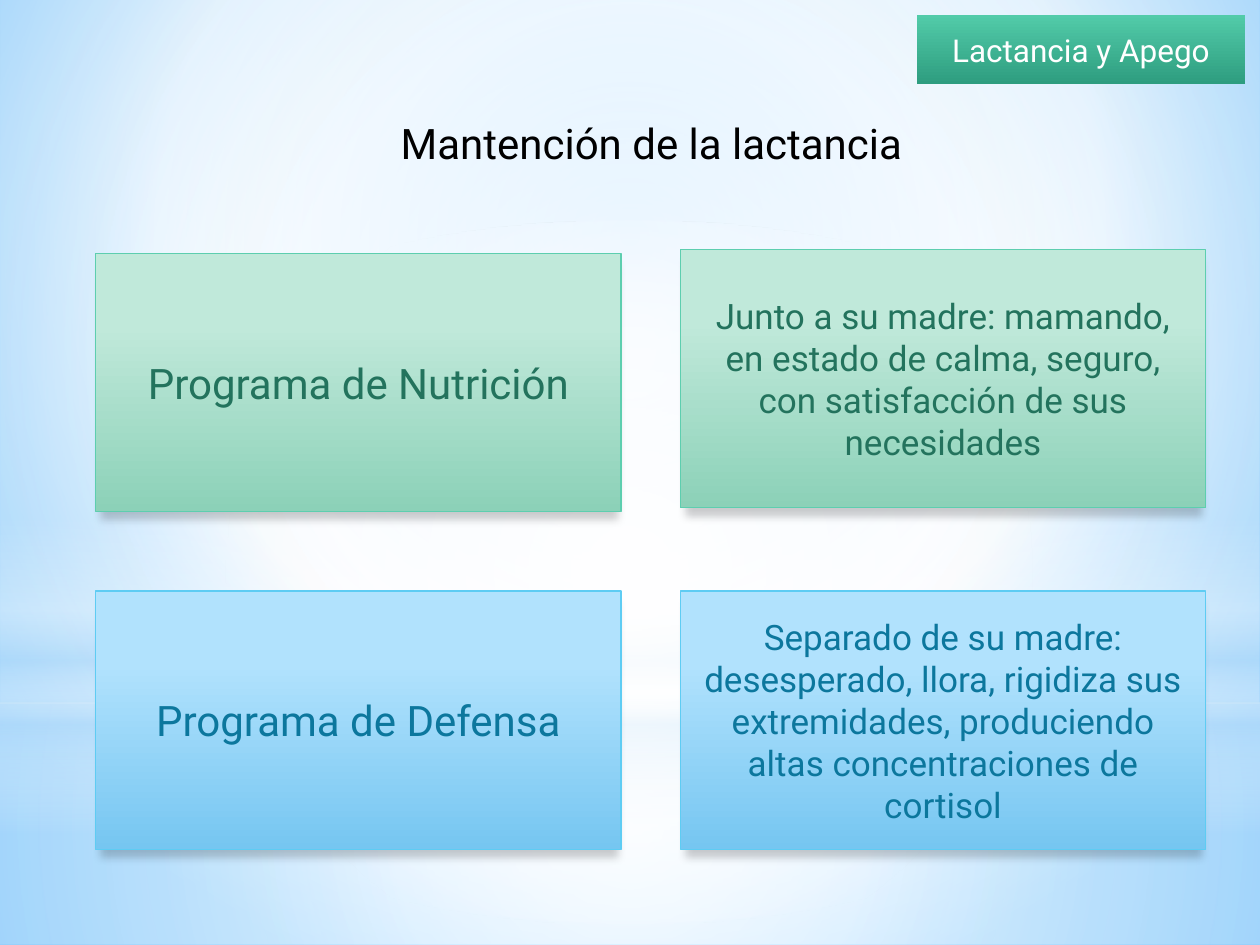
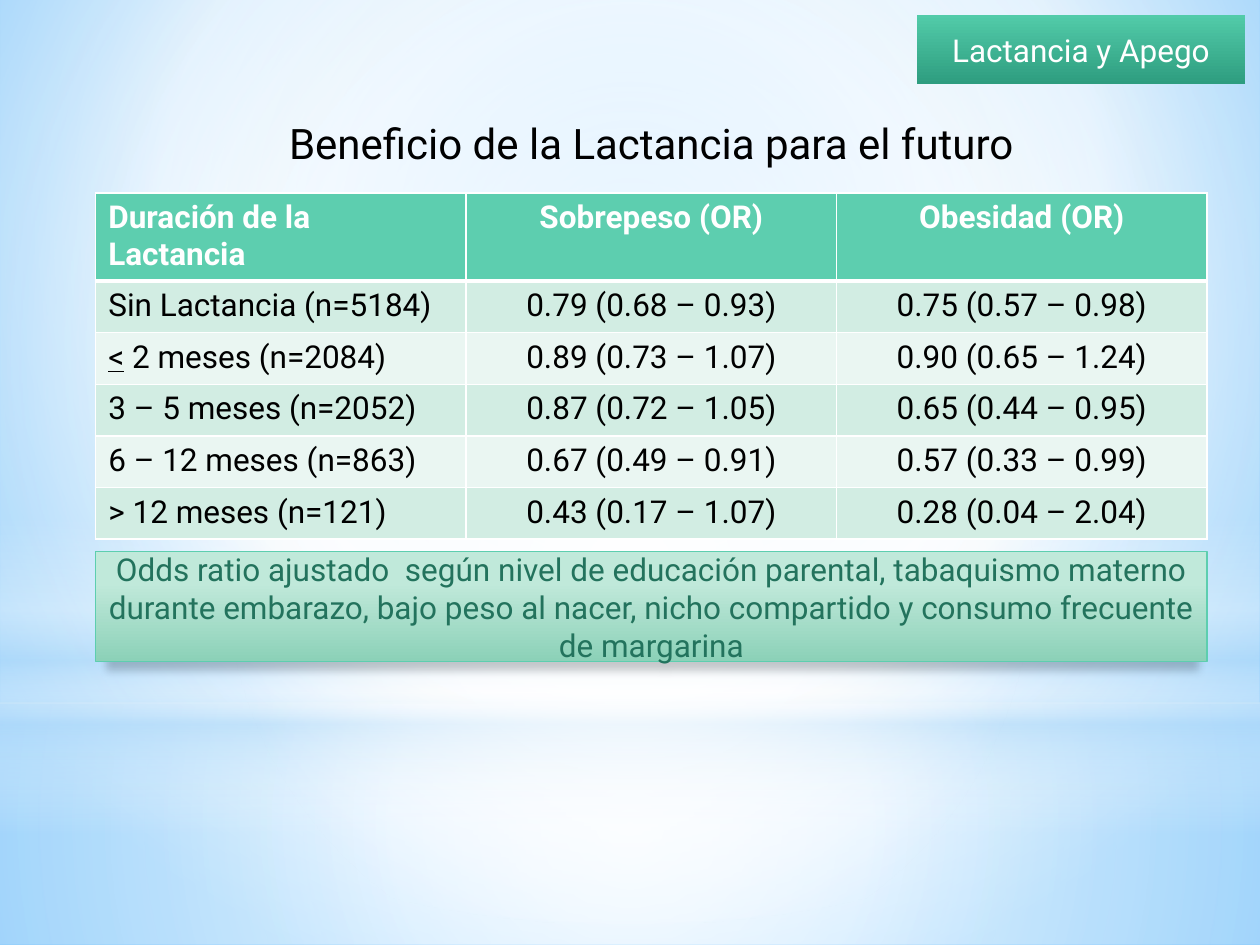
import pptx
import pptx.dml.color
import pptx.enum.shapes
import pptx.enum.text
import pptx.oxml.ns
import pptx.util
from lxml import etree

Inches = pptx.util.Inches
Pt = pptx.util.Pt
RGB = pptx.dml.color.RGBColor
qn = pptx.oxml.ns.qn
Shape = pptx.enum.shapes.MSO_SHAPE
Align = pptx.enum.text.PP_ALIGN
Anchor = pptx.enum.text.MSO_ANCHOR
FONT = "Roboto"

# Colours
WHITE = RGB(0xFF, 0xFF, 0xFF)
BLACK = RGB(0x00, 0x00, 0x00)
MINT = RGB(0x5D, 0xCE, 0xAF)
PINE = RGB(0x23, 0x73, 0x5D)
AQUA = RGB(0x5E, 0xCC, 0xF3)
TEAL = RGB(0x0C, 0x77, 0x9D)
HAZE = RGB(0xB4, 0xDC, 0xFA)
BAND = RGB(0xD2, 0xED, 0xE3)
PALE = RGB(0xEA, 0xF6, 0xF2)

# Gradient stops: position, colour, opacity in percent
SKY = [(0, RGB(0x9E, 0xD5, 0xFF), 100), (60, WHITE, 100),
       (100, RGB(0x5B, 0xB9, 0xFF), 100)]
TAG = [(0, RGB(0x52, 0xCB, 0xA9), 100), (100, RGB(0x2E, 0x9D, 0x7F), 100)]
GREEN = ([(28, RGB(0xC0, 0xE9, 0xDA), 100),
          (100, RGB(0x8C, 0xD1, 0xB8), 100)], MINT, PINE)
BLUE = ([(28, RGB(0xB1, 0xE2, 0xFD), 100),
         (100, RGB(0x76, 0xC6, 0xF1), 100)], AQUA, TEAL)

# Layers of light behind every slide
MID = (50, 50, 50, 50)
GLOW = [
    (Shape.RECTANGLE, 5.58, 1.92, MID,
     [(0, WHITE, 91), (37, WHITE, 76), (100, HAZE, 79)]),
    (Shape.RECTANGLE, 0, 5.58, MID,
     [(0, WHITE, 89), (48, WHITE, 62), (100, HAZE, 79)]),
    (Shape.RECTANGLE, 4.12, 2.5, None,
     [(0, WHITE, 0), (29, WHITE, 30), (45, HAZE, 40),
      (55, WHITE, 26), (65, HAZE, 60), (100, WHITE, 0)]),
    (Shape.OVAL, 1.75, 5.58, MID, [(0, WHITE, 100), (56, WHITE, 0)]),
]

# Shared measures
LEFT, WIDE = 0.76, 8.82
RIGHT, CARD, TALL = 5.4, 4.17, 2.05

# Each page: title, cards (place, size of text, tone, text)
PAGES = [
    ("Mantención de la lactancia", [
        ((LEFT, 2.01, CARD, TALL), 24, GREEN, "Programa de Nutrición"),
        ((LEFT, 4.69, CARD, TALL), 24, BLUE, "Programa de Defensa"),
        ((RIGHT, 1.98, CARD, TALL), 20, GREEN,
         "Junto a su madre: mamando, en estado de calma, seguro, "
         "con satisfacción de sus necesidades"),
        ((RIGHT, 4.69, CARD, TALL), 20, BLUE,
         "Separado de su madre: desesperado, llora, rigidiza sus "
         "extremidades, produciendo altas concentraciones de cortisol"),
    ]),
    ("Beneficio de la Lactancia para el futuro", [
        ((LEFT, 4.38, WIDE, 0.87), 18, GREEN,
         "Odds ratio ajustado  según nivel de educación parental, "
         "tabaquismo materno durante embarazo, bajo peso al nacer, "
         "nicho compartido y consumo frecuente de margarina"),
    ]),
]

ROWS = [
    ("Duración de la Lactancia", "Sobrepeso (OR)", "Obesidad (OR)"),
    ("Sin Lactancia (n=5184)", "0.79 (0.68 – 0.93)", "0.75 (0.57 – 0.98)"),
    ("< 2 meses (n=2084)", "0.89 (0.73 – 1.07)", "0.90 (0.65 – 1.24)"),
    ("3 – 5 meses (n=2052)", "0.87 (0.72 – 1.05)", "0.65 (0.44 – 0.95)"),
    ("6 – 12 meses (n=863)", "0.67 (0.49 – 0.91)", "0.57 (0.33 – 0.99)"),
    ("> 12 meses (n=121)", "0.43 (0.17 – 1.07)", "0.28 (0.04 – 2.04)"),
]


def write(frame, text, size=18, color=BLACK, bold=False,
          align=Align.CENTER, anchor=Anchor.TOP):
    """Fill a text frame; a leading "<" is underlined."""
    frame.word_wrap = True
    frame.vertical_anchor = anchor
    para = frame.paragraphs[0]
    para.alignment = align
    cut = 1 if text.startswith("<") else 0
    for part, under in ((text[:cut], True), (text[cut:], False)):
        if part:
            run = para.add_run()
            run.text = part
            run.font.name = FONT
            run.font.size = Pt(size)
            run.font.bold = bold
            run.font.underline = under
            run.font.color.rgb = color


def paint(fill, props, stops, focus=None):
    """Gradient from top to bottom, or round a focus rectangle."""
    fill.gradient()
    grad = props.find(qn("a:gradFill"))
    for child in list(grad):
        grad.remove(child)
    chain = etree.SubElement(grad, qn("a:gsLst"))
    for spot, color, clear in stops:
        stop = etree.SubElement(chain, qn("a:gs"), pos=str(spot * 1000))
        tint = etree.SubElement(stop, qn("a:srgbClr"), val=str(color))
        if clear < 100:
            etree.SubElement(tint, qn("a:alpha"), val=str(clear * 1000))
    if focus:
        ring = etree.SubElement(grad, qn("a:path"), path="circle")
        sides = {side: str(n * 1000) for side, n in zip("ltrb", focus)}
        etree.SubElement(ring, qn("a:fillToRect"), **sides)
    else:
        etree.SubElement(grad, qn("a:lin"), ang="5400000", scaled="0")


deck = pptx.Presentation()
deck.slide_width, deck.slide_height = Inches(10), Inches(7.5)

for title, cards in PAGES:
    slide = deck.slides.add_slide(deck.slide_layouts[6])
    shapes = slide.shapes

    # Background and light
    fill = slide.background.fill
    paint(fill, slide.element.find(".//" + qn("p:bgPr")), SKY,
          (20, 10, 20, 60))
    for kind, top, high, focus, stops in GLOW:
        glow = shapes.add_shape(kind, 0, Inches(top), Inches(10), Inches(high))
        glow.shadow.inherit = False
        glow.line.fill.background()
        paint(glow.fill, glow.element.spPr, stops, focus)

    # Title
    head = shapes.add_textbox(*map(Inches, (LEFT, 0.88, WIDE, 0.5)))
    write(head.text_frame, title, size=24)
    head.text_frame.auto_size = pptx.enum.text.MSO_AUTO_SIZE.SHAPE_TO_FIT_TEXT

    # Cards with a soft shadow
    for place, size, (stops, edge, ink), text in cards:
        card = shapes.add_shape(Shape.RECTANGLE, *map(Inches, place))
        card.line.color.rgb = edge
        card.line.width = Pt(0.75)
        paint(card.fill, card.element.spPr, stops)
        card.shadow.inherit = False
        soft = etree.SubElement(
            card.element.spPr.find(qn("a:effectLst")), qn("a:outerShdw"),
            blurRad=str(Pt(5)), dist=str(Pt(4)), dir="5400000",
            sx="98000", sy="98000", rotWithShape="0")
        tint = etree.SubElement(soft, qn("a:srgbClr"), val=str(BLACK))
        etree.SubElement(tint, qn("a:alpha"), val="20000")
        write(card.text_frame, text, size=size, color=ink,
              anchor=Anchor.MIDDLE)

    # Topic tag
    tag = shapes.add_shape(Shape.RECTANGLE,
                           *map(Inches, (7.28, 0.12, 2.6, 0.55)))
    tag.shadow.inherit = False
    tag.line.fill.background()
    paint(tag.fill, tag.element.spPr, TAG)
    write(tag.text_frame, "Lactancia y Apego", color=WHITE,
          anchor=Anchor.MIDDLE)

# Table of odds ratios on the last slide
grid = shapes.add_table(len(ROWS), 3, Inches(LEFT), Inches(1.53),
                        Inches(WIDE), Inches(2.73)).table
for col in grid.columns:
    col.width = Inches(WIDE / 3)
for r, row in enumerate(ROWS):
    grid.rows[r].height = Inches(0.41 if r else 0.68)
    for c, text in enumerate(row):
        cell = grid.cell(r, c)
        write(cell.text_frame, text, color=BLACK if r else WHITE,
              bold=r == 0, align=Align.CENTER if c else Align.LEFT)
        props = cell._tc.get_or_add_tcPr()
        for side in "LRTB":
            thick = (r, side) in ((0, "B"), (1, "T"))
            line = etree.SubElement(props, qn("a:ln" + side),
                                    w=str(Pt(3 if thick else 1)))
            solid = etree.SubElement(line, qn("a:solidFill"))
            etree.SubElement(solid, qn("a:srgbClr"), val=str(WHITE))
        cell.fill.solid()
        cell.fill.fore_color.rgb = (BAND if r % 2 else PALE) if r else MINT

deck.save("out.pptx")
